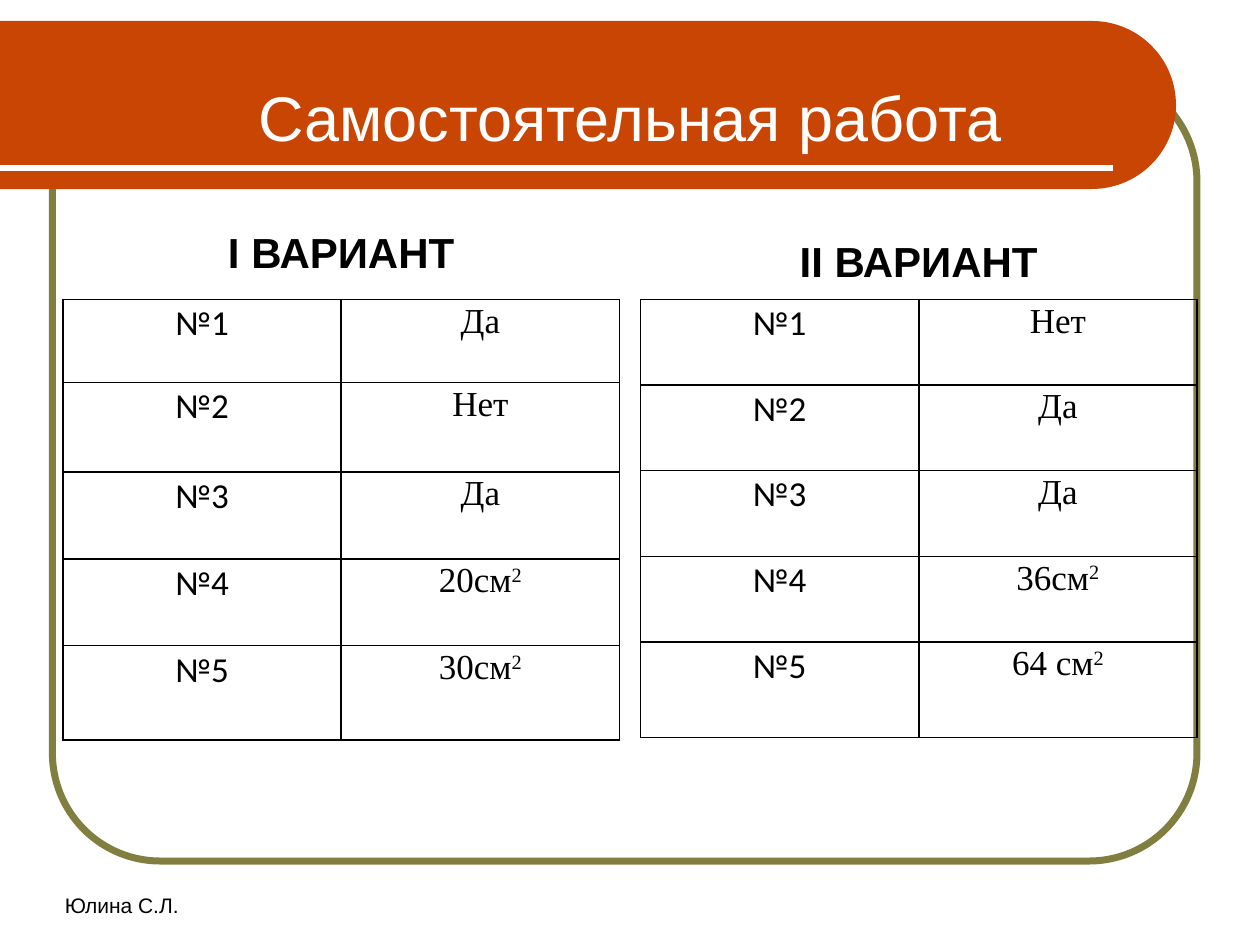
import math

import lxml.etree
import pptx
import pptx.dml.color
import pptx.enum.shapes
import pptx.enum.text
import pptx.oxml.ns
import pptx.util

COLORS = {"banner": "C94503", "frame": "817F3F", "paper": "FFFFFF", "ink": "000000"}
GRID = pptx.util.Inches(1 / 12)  # the slide is 120 columns by 90 rows
ALIGN = pptx.enum.text.PP_ALIGN
ANCHOR = pptx.enum.text.MSO_ANCHOR
SHAPE = pptx.enum.shapes.MSO_SHAPE
CONNECTOR = pptx.enum.shapes.MSO_CONNECTOR

VARIANTS = [
    {"heading": "I ВАРИАНТ", "left": 6, "heading_top": 18.6, "inset": 0.12,
     "answers": ["Да", "Нет", "Да", "20см²", "30см²"],
     "row_heights": [0.66, 0.71, 0.69, 0.69, 0.75]},
    {"heading": "II ВАРИАНТ", "left": 61, "heading_top": 19.4, "inset": 0.13,
     "answers": ["Нет", "Да", "Да", "36см²", "64 см²"],
     "row_heights": [0.68, 0.68, 0.68, 0.68, 0.76]},
]


def grid(*cells):
    return [round(cell * GRID) for cell in cells]


def rgb(name):
    return pptx.dml.color.RGBColor.from_string(COLORS[name])


def format_run(run, size, font="Arial", color="ink", bold=False):
    run.font.size = pptx.util.Pt(size)
    run.font.name = font
    run.font.color.rgb = rgb(color)
    run.font.bold = bold


def write_line(shape, text, size, align, anchor, **style):
    frame = shape.text_frame
    frame.text = text
    frame.word_wrap = True
    frame.vertical_anchor = anchor
    paragraph = frame.paragraphs[0]
    paragraph.alignment = align
    format_run(paragraph.runs[0], size, **style)


def add_frame(slide, box):
    frame = slide.shapes.add_shape(SHAPE.ROUNDED_RECTANGLE, *grid(*box))
    frame.adjustments[0] = 0.137
    frame.shadow.inherit = False
    frame.fill.background()
    frame.line.color.rgb = rgb("frame")
    frame.line.width = pptx.util.Pt(4)


def add_banner(slide, box):
    """Band with a half-round right end and a white rule near its foot."""
    left, top, width, height = box
    radius = height / 2
    center_x, center_y = left + width - radius, top + radius
    angles = [math.radians(degree) for degree in range(-90, 91, 3)]
    arc = [grid(center_x + radius * math.cos(a), center_y + radius * math.sin(a)) for a in angles]
    builder = slide.shapes.build_freeform(*grid(left, top))
    builder.add_line_segments(arc + [grid(left, top + height)], close=True)
    banner = builder.convert_to_shape()
    banner.shadow.inherit = False
    banner.fill.solid()
    banner.fill.fore_color.rgb = rgb("banner")
    banner.line.fill.background()

    rule_y = top + height * 7 / 8
    rule = slide.shapes.add_connector(
        CONNECTOR.STRAIGHT, *grid(left, rule_y, left + width - 6, rule_y))
    rule.line.color.rgb = rgb("paper")
    rule.line.width = pptx.util.Pt(3)
    lxml.etree.SubElement(rule._element.spPr, pptx.oxml.ns.qn("a:effectLst"))


def place_title(slide, box, text):
    title = slide.shapes.title
    title.left, title.top, title.width, title.height = grid(*box)
    write_line(title, text, 36, ALIGN.CENTER, ANCHOR.MIDDLE, color="paper")
    slide.shapes._spTree.append(title._element)  # in front of the banner


def add_label(slide, box, text, size, align, **style):
    label = slide.shapes.add_textbox(*grid(*box))
    write_line(label, text, size, align, ANCHOR.BOTTOM, **style)


def add_borders(cell):
    properties = cell._tc.get_or_add_tcPr()
    for position, side in enumerate(("lnL", "lnR", "lnT", "lnB")):
        border = lxml.etree.Element(pptx.oxml.ns.qn("a:" + side), w="12700")
        fill = lxml.etree.SubElement(border, pptx.oxml.ns.qn("a:solidFill"))
        lxml.etree.SubElement(fill, pptx.oxml.ns.qn("a:srgbClr"), val=COLORS["ink"])
        properties.insert(position, border)


def fill_cell(cell, text, font, inset):
    """Write the text, turning a closing ² into a raised 2."""
    cell.fill.background()
    cell.margin_left = cell.margin_right = pptx.util.Inches(inset)
    cell.margin_top = cell.margin_bottom = 0
    paragraph = cell.text_frame.paragraphs[0]
    paragraph.text = text.removesuffix("²")
    paragraph.alignment = ALIGN.CENTER
    paragraph.line_spacing = 1.07
    if text.endswith("²"):
        power = paragraph.add_run()
        power.text = "2"
        power.font._element.set("baseline", "30000")
    for run in paragraph.runs:
        format_run(run, 20, font)
    add_borders(cell)


def add_answers(slide, box, variant):
    answers = variant["answers"]
    table = slide.shapes.add_table(len(answers), 2, *grid(*box)).table
    table.first_row = table.horz_banding = False
    for row, (answer, height) in enumerate(zip(answers, variant["row_heights"])):
        table.rows[row].height = pptx.util.Inches(height)
        fill_cell(table.cell(row, 0), f"№{row + 1}", "Calibri", variant["inset"])
        fill_cell(table.cell(row, 1), answer, "Times New Roman", variant["inset"])


def add_variant(slide, variant):
    left, width = variant["left"], 53
    add_label(slide, (left, variant["heading_top"], width, 8.4),
              variant["heading"], 24, ALIGN.CENTER, bold=True)
    add_answers(slide, (left, 28.5, width, 42), variant)


def main():
    deck = pptx.Presentation()
    deck.slide_width, deck.slide_height = grid(120, 90)
    slide = deck.slides.add_slide(deck.slide_layouts.get_by_name("Title Only"))
    slide.background.fill.solid()
    slide.background.fill.fore_color.rgb = rgb("paper")
    add_frame(slide, (5, 7, 109, 75))
    add_banner(slide, (0, 2, 112, 16))
    place_title(slide, (6, 3.6, 108, 15), "Самостоятельная работа")
    for variant in VARIANTS:
        add_variant(slide, variant)
    add_label(slide, (5, 82, 38, 6), "Юлина С.Л.", 12, ALIGN.LEFT)
    deck.save("out.pptx")


if __name__ == "__main__":
    main()
